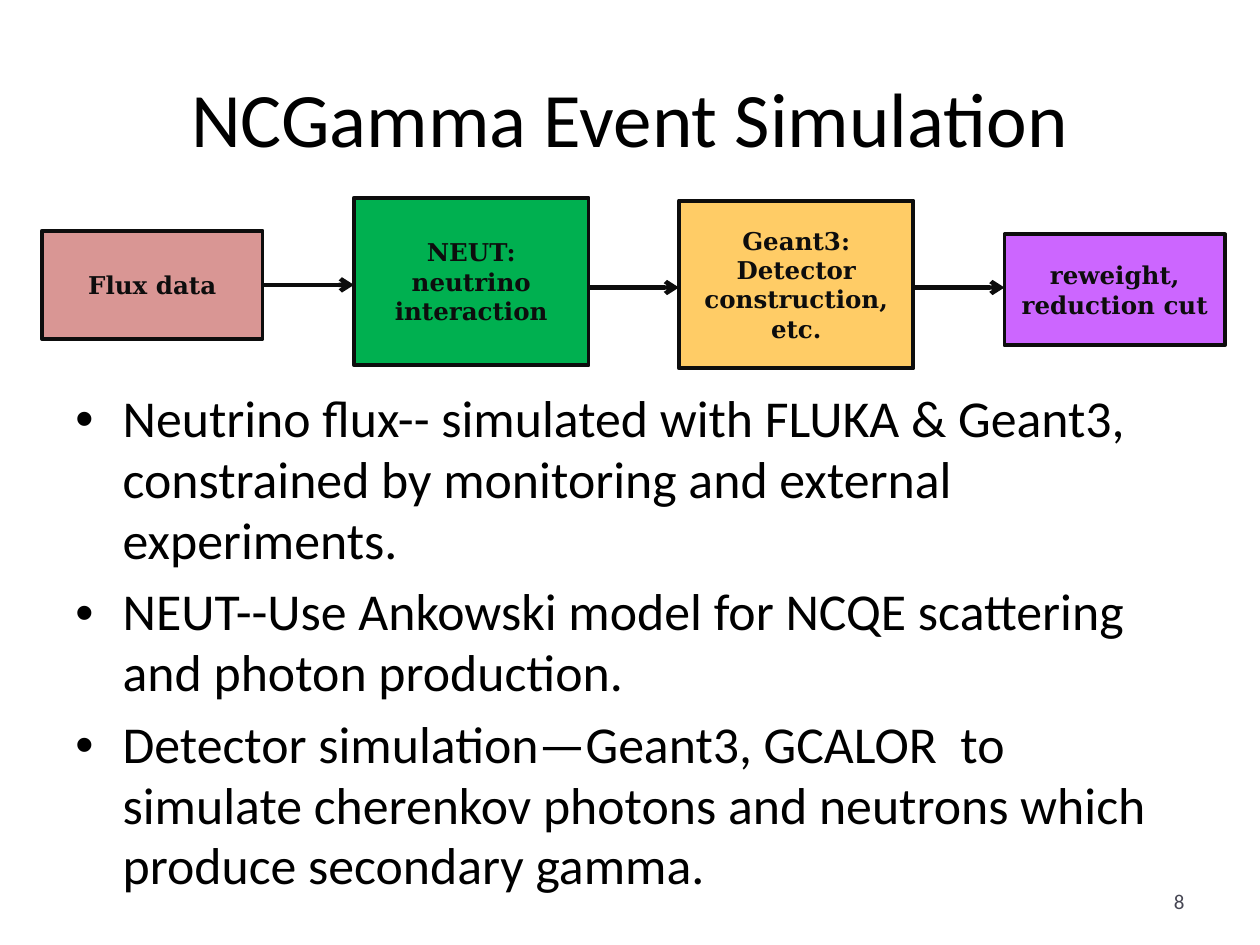
from typing import NamedTuple

from lxml import etree
from pptx import Presentation
from pptx.dml.color import RGBColor
from pptx.enum.shapes import MSO_CONNECTOR, MSO_SHAPE
from pptx.enum.text import MSO_ANCHOR, PP_ALIGN
from pptx.oxml.ns import qn
from pptx.util import Pt

STRAIGHT, RECTANGLE = MSO_CONNECTOR.STRAIGHT, MSO_SHAPE.RECTANGLE
TOP, MIDDLE = MSO_ANCHOR.TOP, MSO_ANCHOR.MIDDLE
LEFT, CENTER, RIGHT = PP_ALIGN.LEFT, PP_ALIGN.CENTER, PP_ALIGN.RIGHT

COLORS = {
    "black": "000000",
    "ink": "0D0D0D",
    "number": "464653",
    "flux": "D99694",
    "neut": "00B050",
    "geant": "FFCC66",
    "cut": "CC66FF",
}
TITLE_FONT = {"name": "Calibri", "size": Pt(44)}
BODY_FONT = {"name": "Calibri", "size": Pt(29.6)}
NUMBER_FONT = {"name": "Calibri", "size": Pt(12)}
STAGE_FONT = {"name": "DejaVu Serif", "size": Pt(14), "bold": True}
BULLET_FORMAT = {"space_before": Pt(5.9), "line_spacing": 0.98}


class Box(NamedTuple):
    left: float
    top: float
    width: float
    height: float


class Stage(NamedTuple):
    box: Box
    fill: str
    lines: list[str]


class Arrow(NamedTuple):
    start: int
    y: float
    joined: bool


STAGES = [
    Stage(Box(24, 131.8, 126, 62), "flux", ["Flux data"]),
    Stage(Box(202.3, 113, 134, 95.8), "neut", ["NEUT:", "neutrino interaction"]),
    Stage(Box(388, 114.7, 134, 95.8), "geant", ["Geant3:", "Detector construction, etc."]),
    Stage(Box(574, 133.9, 126, 63.4), "cut", ["reweight, reduction cut"]),
]
ARROWS = [Arrow(0, 162.8, True), Arrow(1, 164.3, False), Arrow(2, 164.3, False)]
BULLETS = [
    "Neutrino flux-- simulated with FLUKA & Geant3, constrained by monitoring and external experiments.",
    "NEUT--Use Ankowski model for NCQE scattering and photon production.",
    "Detector simulation—Geant3, GCALOR  to simulate cherenkov photons and neutrons which produce secondary gamma.",
]


def rgb(name: str) -> RGBColor:
    return RGBColor.from_string(COLORS[name])


def set_attrs(target, values: dict) -> None:
    for key, value in values.items():
        setattr(target, key, value)


def write(tf, lines: list[str], font: dict, color: str, align, anchor) -> None:
    set_attrs(tf, {"word_wrap": True, "vertical_anchor": anchor})
    for i, line in enumerate(lines):
        p = tf.paragraphs[0] if i == 0 else tf.add_paragraph()
        p.alignment = align
        r = p.add_run()
        r.text = line
        set_attrs(r.font, font)
        r.font.color.rgb = rgb(color)


def add_text(s, box: Box, lines: list[str], font: dict, color: str, align, anchor):
    sp = s.shapes.add_textbox(*map(Pt, box))
    write(sp.text_frame, lines, font, color, align, anchor)
    return sp


def add_bullets(s, box: Box, lines: list[str]) -> None:
    sp = add_text(s, box, lines, BODY_FONT, "black", LEFT, TOP)
    for p in sp.text_frame.paragraphs:
        set_attrs(p, BULLET_FORMAT)
        pPr = p._p.get_or_add_pPr()
        pPr.set("marL", str(Pt(27)))
        pPr.set("indent", str(-Pt(27)))
        etree.SubElement(pPr, qn("a:buFont"), typeface="Arial")
        etree.SubElement(pPr, qn("a:buChar"), char="•")


def add_stage(s, stage: Stage):
    sp = s.shapes.add_shape(RECTANGLE, *map(Pt, stage.box))
    sp.shadow.inherit = False
    sp.fill.solid()
    sp.fill.fore_color.rgb = rgb(stage.fill)
    sp.line.color.rgb = rgb("ink")
    sp.line.width = Pt(2.25)
    write(sp.text_frame, stage.lines, STAGE_FONT, "ink", CENTER, MIDDLE)
    return sp


def add_arrow(s, arrow: Arrow, shapes: list) -> None:
    begin, end = shapes[arrow.start], shapes[arrow.start + 1]
    y = Pt(arrow.y)
    cn = s.shapes.add_connector(STRAIGHT, begin.left + begin.width, y, end.left, y)
    if arrow.joined:
        cn.begin_connect(begin, 3)
    cn.line.color.rgb = rgb("ink")
    cn.line.width = Pt(2.5)
    etree.SubElement(cn.line._get_or_add_ln(), qn("a:tailEnd"), type="arrow")
    etree.SubElement(cn._element.spPr, qn("a:effectLst"))


def main() -> None:
    """Build the event simulation slide."""
    prs = Presentation()
    prs.slide_width, prs.slide_height = Pt(720), Pt(540)
    s = prs.slides.add_slide(prs.slide_layouts[6])
    add_text(s, Box(36, 21.6, 648, 90), ["NCGamma Event Simulation"],
             TITLE_FONT, "black", CENTER, MIDDLE)
    add_bullets(s, Box(36, 218.9, 648, 285.8), BULLETS)
    add_text(s, Box(516, 500.5, 168, 28.8), ["8"], NUMBER_FONT, "number", RIGHT, MIDDLE)
    shapes = [add_stage(s, stage) for stage in STAGES]
    for arrow in ARROWS:
        add_arrow(s, arrow, shapes)
    prs.save("out.pptx")


if __name__ == "__main__":
    main()
